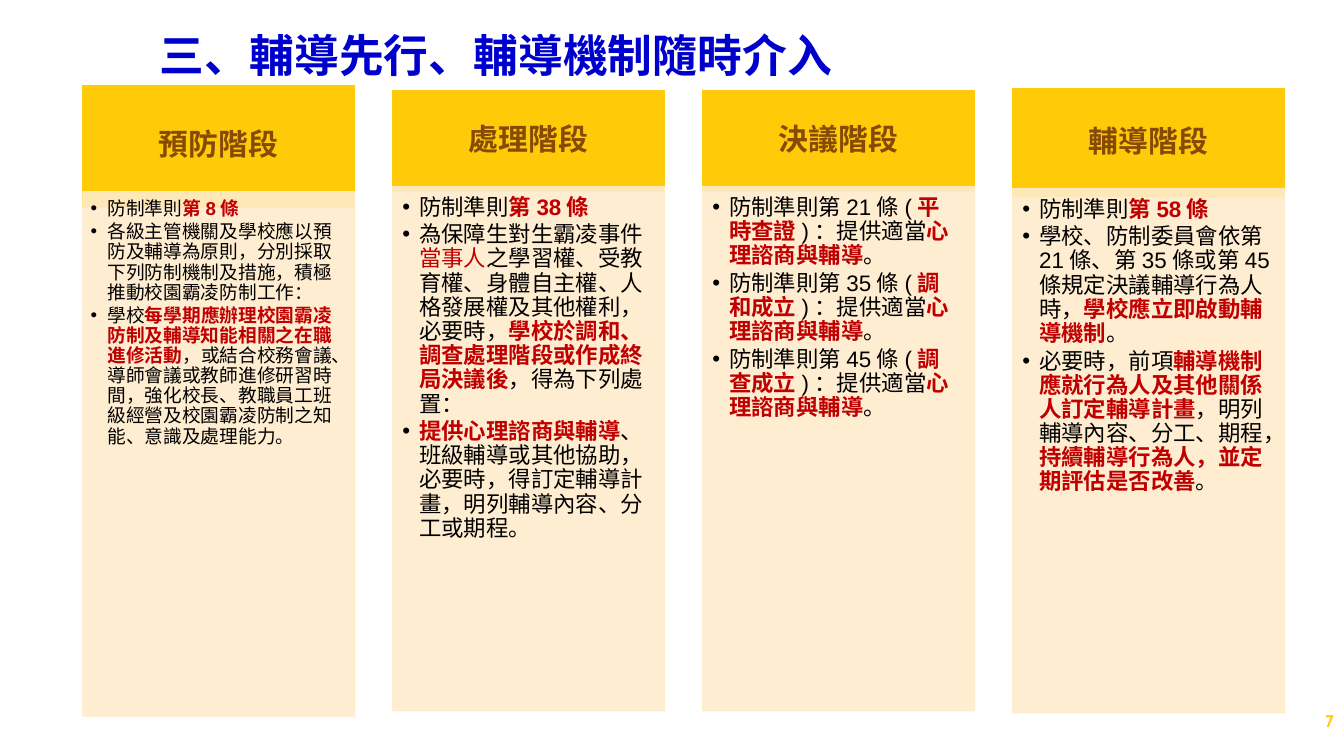
from lxml import etree
from pptx import Presentation
from pptx.dml.color import RGBColor
from pptx.enum import shapes, text
from pptx.oxml.ns import qn
from pptx.util import Inches, Pt

COLORS = {
    "title": "0000CC",
    "header": "FFCA08",
    "header_text": "864A04",
    "panel": "FFECCC",
    "body": "000000",
    "accent": "C00000",
}

# Column grid, in inches
FIRST_LEFT, COLUMN_STEP, COLUMN_WIDTH = 1.23, 4.613, 4.05
PANEL_HEIGHT = 7.81

# In the items "|" parts the runs; "*" starts bold red, "~" plain red
STAGES = [
    {"name": "預防階段", "top": 1.27, "height": 1.81, "panel_top": 2.85, "size": 20, "items": [
        "防制準則|*第8條",
        "各級主管機關及學校應以預防及輔導為原則，分別採取下列防制機制及措施，積極推動校園霸凌防制工作：",
        "學校|*每學期應辦理校園霸凌防制及輔導知能相關之在職進修活動|，或結合校務會議、導師會議或"
        "教師進修研習時間，強化校長、教職員工班級經營及校園霸凌防制之知能、意識及處理能力。",
    ]},
    {"name": "處理階段", "top": 1.34, "height": 1.51, "panel_top": 2.77, "size": 24, "items": [
        "防制準則|*第38條",
        "為保障生對生霸凌事件|~當事人|之學習權、受教育權、身體自主權、人格發展權及其他權利，"
        "必要時，|*學校於調和、調查處理階段或作成終局決議後|，得為下列處置：",
        "*提供心理諮商與輔導|、班級輔導或其他協助，必要時，得訂定輔導計畫，明列輔導內容、分工或期程。",
    ]},
    {"name": "決議階段", "top": 1.34, "height": 1.51, "panel_top": 2.77, "size": 24, "items": [
        f"防制準則第{article}條(|*{case}|)：提供適當|*心理諮商與輔導|。"
        for article, case in [(21, "平時查證"), (35, "調和成立"), (45, "調查成立")]
    ]},
    {"name": "輔導階段", "top": 1.32, "height": 1.61, "panel_top": 2.8, "size": 24, "items": [
        "防制準則|*第58條",
        "學校、防制委員會依第21條、第35條或第45條規定決議輔導行為人時，|*學校應立即啟動輔導機制|。",
        "必要時，前項|*輔導機制應就行為人及其他關係人訂定輔導計畫|，明列輔導內容、分工、期程，"
        "|*持續輔導行為人，並定期評估是否改善|。",
    ]},
]


def set_values(target, values):
    for name, value in values.items():
        setattr(target, name, value)


def add_run(paragraph, words, size, color, bold=True, font="Arial"):
    run = paragraph.add_run()
    run.text = words
    set_values(run.font, {"name": font, "size": Pt(size), "bold": bold})
    run.font.color.rgb = RGBColor.from_string(COLORS[color])


def format_frame(frame, insets, anchor):
    sides = ("margin_left", "margin_top", "margin_right", "margin_bottom")
    set_values(frame, dict(zip(sides, map(Inches, insets))))
    set_values(frame, {"word_wrap": True, "vertical_anchor": anchor,
                       "auto_size": text.MSO_AUTO_SIZE.NONE})


def format_paragraph(paragraph, alignment, size, share_after):
    set_values(paragraph, {"alignment": alignment, "line_spacing": 0.9,
                           "space_before": Pt(0), "space_after": Pt(size * share_after)})


def add_bullet(paragraph):
    properties = paragraph._p.get_or_add_pPr()
    properties.set("marL", str(Inches(0.25)))
    properties.set("indent", str(-Inches(0.25)))
    color = etree.SubElement(properties, qn("a:buClr"))
    etree.SubElement(color, qn("a:srgbClr"), val=COLORS["body"])
    etree.SubElement(properties, qn("a:buFont"), typeface="Arial")
    etree.SubElement(properties, qn("a:buChar"), char="•")


def add_box(slide, left, top, height, color, opacity=100):
    shape = slide.shapes.add_shape(shapes.MSO_SHAPE.RECTANGLE, Inches(left), Inches(top),
                                   Inches(COLUMN_WIDTH), Inches(height))
    shape.shadow.inherit = False
    shape.fill.solid()
    shape.line.width = Pt(0.85)
    shape.line.fill.solid()
    for fill in (shape.fill, shape.line.fill):
        fill.fore_color.rgb = RGBColor.from_string(COLORS[color])
    if opacity < 100:
        for element in shape._element.spPr.iter(qn("a:srgbClr")):
            etree.SubElement(element, qn("a:alpha"), val=str(opacity * 1000))
    return shape


def add_header(slide, left, stage):
    frame = add_box(slide, left, stage["top"], stage["height"], "header").text_frame
    format_frame(frame, (0.25, 0.14, 0.25, 0.14), text.MSO_ANCHOR.MIDDLE)
    paragraph = frame.paragraphs[0]
    format_paragraph(paragraph, text.PP_ALIGN.CENTER, 32, 0.35)
    add_run(paragraph, stage["name"], 32, "header_text")


def add_panel(slide, left, stage):
    size = stage["size"]
    frame = add_box(slide, left, stage["panel_top"], PANEL_HEIGHT, "panel", 90).text_frame
    # Insets grow with the text size
    insets = [size * share for share in (0.006, 0.006, 0.008, 0.0086)]
    format_frame(frame, insets, text.MSO_ANCHOR.TOP)
    for index, item in enumerate(stage["items"]):
        paragraph = frame.add_paragraph() if index else frame.paragraphs[0]
        paragraph.level = 1
        format_paragraph(paragraph, text.PP_ALIGN.LEFT, size, 0.15)
        add_bullet(paragraph)
        for part in item.split("|"):
            color = "accent" if part[0] in "*~" else "body"
            add_run(paragraph, part.lstrip("*~"), size, color, part[0] == "*")


def add_title(slide, words):
    title = slide.shapes.title
    set_values(title, {"left": Inches(2.28), "top": Inches(0.11),
                       "width": Inches(17.17), "height": Inches(1.42)})
    format_frame(title.text_frame, (0.1, 0.05, 0.1, 0.05), text.MSO_ANCHOR.MIDDLE)
    paragraph = title.text_frame.paragraphs[0]
    paragraph.alignment = text.PP_ALIGN.LEFT
    add_run(paragraph, words, 48, "title")


def add_page_number(slide, number):
    box = slide.shapes.add_textbox(Inches(17.44), Inches(10.43), Inches(2.51), Inches(0.6))
    format_frame(box.text_frame, (0.1, 0.05, 0.1, 0.05), text.MSO_ANCHOR.MIDDLE)
    paragraph = box.text_frame.paragraphs[0]
    paragraph.alignment = text.PP_ALIGN.RIGHT
    add_run(paragraph, number, 18, "header", font="Cabin")


def main():
    presentation = Presentation()
    set_values(presentation, {"slide_width": Inches(20), "slide_height": Inches(11.25)})
    slide = presentation.slides.add_slide(presentation.slide_layouts.get_by_name("Title Only"))

    # Title and page number
    add_title(slide, "三、輔導先行、輔導機制隨時介入")
    add_page_number(slide, "7")

    # One column per stage
    for column, stage in enumerate(STAGES):
        left = FIRST_LEFT + column * COLUMN_STEP
        add_header(slide, left, stage)
        add_panel(slide, left, stage)

    presentation.save("out.pptx")


if __name__ == "__main__":
    main()
